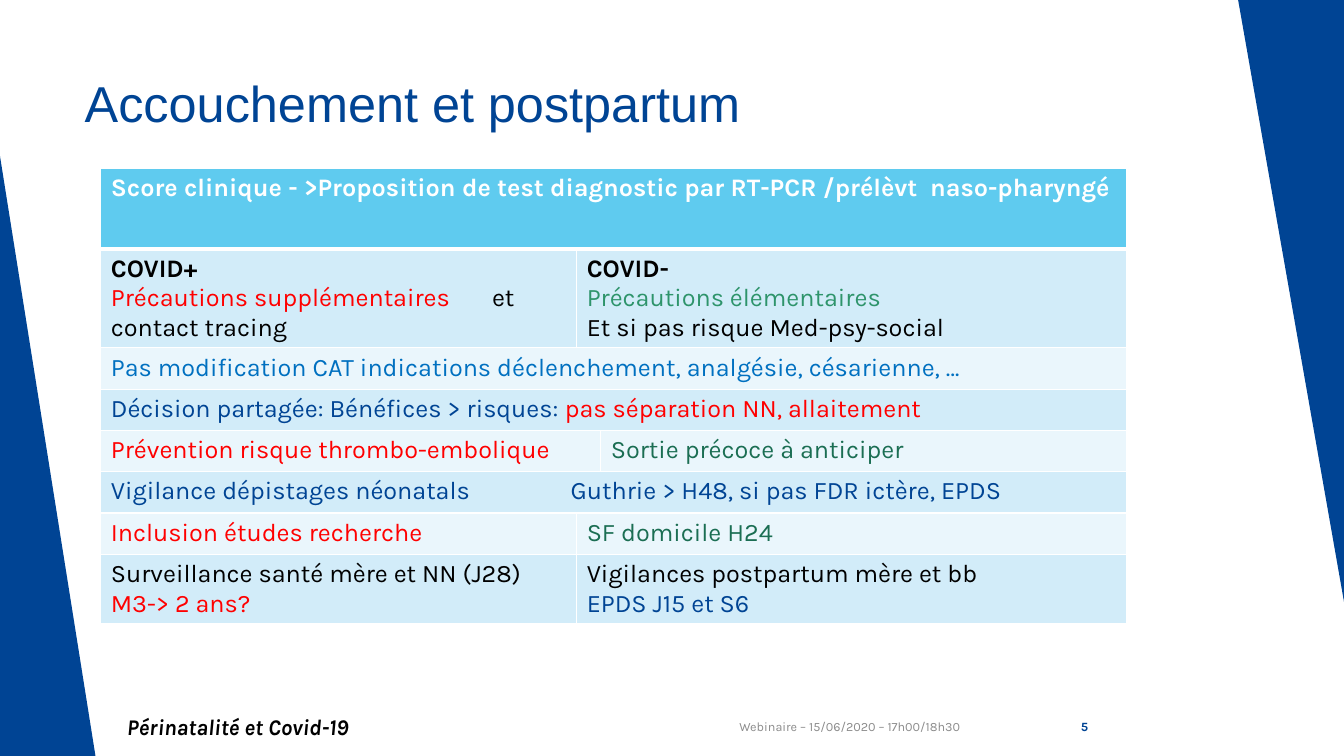
from lxml import etree
from pptx import Presentation
from pptx.dml.color import RGBColor
from pptx.enum.shapes import MSO_SHAPE
from pptx.enum.text import MSO_ANCHOR, PP_ALIGN
from pptx.oxml.ns import qn
from pptx.util import Inches, Pt

TRIANGLE = MSO_SHAPE.RIGHT_TRIANGLE
TOP, MIDDLE = MSO_ANCHOR.TOP, MSO_ANCHOR.MIDDLE
LEFT, RIGHT = PP_ALIGN.LEFT, PP_ALIGN.RIGHT

NAVY = RGBColor(0x00, 0x44, 0x94)
BLUE = RGBColor(0x00, 0x70, 0xC0)
RED = RGBColor(0xFF, 0x00, 0x00)
GREEN = RGBColor(0x2E, 0x94, 0x6B)
DARK_GREEN = RGBColor(0x1B, 0x6E, 0x53)
BLACK = RGBColor(0x00, 0x00, 0x00)
WHITE = RGBColor(0xFF, 0xFF, 0xFF)
GREY = RGBColor(0x8C, 0x8C, 0x8C)
HEADER_FILL = RGBColor(0x5F, 0xCB, 0xEF)
DARK_BAND = RGBColor(0xD2, 0xEC, 0xF9)
LIGHT_BAND = RGBColor(0xEA, 0xF6, 0xFC)


def add_run(paragraph, text, size, color, bold=False, italic=False, font="Karla"):
    run = paragraph.add_run()
    run.text = text
    run.font.name = font
    run.font.size = Pt(size)
    run.font.color.rgb = color
    run.font.bold = bold
    run.font.italic = italic


def add_border(cell, side, points):
    line = etree.SubElement(cell._tc.get_or_add_tcPr(), qn("a:" + side), w=str(Pt(points)))
    fill = etree.SubElement(line, qn("a:solidFill"))
    etree.SubElement(fill, qn("a:srgbClr"), val=str(WHITE))


presentation = Presentation()
presentation.slide_width = Inches(13.33)
presentation.slide_height = Inches(7.5)
slide = presentation.slides.add_slide(presentation.slide_layouts[5])

# Side triangles
for left, top, width, rotation in [(0, 1.55, 0.95, 0), (12.28, 0, 1.05, 180)]:
    triangle = slide.shapes.add_shape(
        TRIANGLE, Inches(left), Inches(top), Inches(width), Inches(5.97))
    triangle.rotation = rotation
    triangle.shadow.inherit = False
    triangle.fill.solid()
    triangle.fill.fore_color.rgb = NAVY
    triangle.line.fill.background()

# Title
title = slide.shapes.title
title.left, title.top = Inches(0.74), Inches(0.67)
title.width, title.height = Inches(9.4), Inches(1.44)
title.text_frame.vertical_anchor = TOP
title.text_frame.paragraphs[0].alignment = LEFT
add_run(title.text_frame.paragraphs[0], "Accouchement et postpartum", 36, NAVY, font="Arial")

# Table content: (row, first column, last column, paragraphs, tab stop in inches)
# Each paragraph is a list of runs: (text, colour, bold)
cells = [
    (0, 0, 2, [[("Score clinique - >Proposition de test diagnostic par RT-PCR "
                 "/prélèvt  naso-pharyngé", WHITE, True)]], None),
    (1, 0, 0, [[("COVID+", BLACK, True)],
               [("Précautions supplémentaires\t", RED, False),
                ("et contact tracing", BLACK, False)]], 3.78),
    (1, 1, 2, [[("COVID-", BLACK, True)],
               [("Précautions élémentaires", GREEN, False)],
               [("Et si pas risque Med-psy-social", BLACK, False)]], None),
    (2, 0, 2, [[("Pas modification CAT indications déclenchement, analgésie, "
                 "césarienne, …", BLUE, False)]], None),
    (3, 0, 2, [[("Décision partagée: Bénéfices > risques: ", NAVY, False),
                ("pas séparation NN, allaitement", RED, False)]], None),
    (4, 0, 1, [[("Prévention risque thrombo-embolique", RED, False)]], None),
    (4, 2, 2, [[("Sortie précoce à anticiper", DARK_GREEN, False)]], None),
    (5, 0, 2, [[("Vigilance dépistages néonatals\tGuthrie > H48, si pas FDR ictère, EPDS",
                 NAVY, False)]], 4.56),
    (6, 0, 0, [[("Inclusion études recherche", RED, False)]], None),
    (6, 1, 2, [[("SF domicile H24", DARK_GREEN, False)]], None),
    (7, 0, 0, [[("Surveillance santé mère et NN (J28) ", BLACK, False),
                ("M3-> 2 ans?", RED, False)]], None),
    (7, 1, 2, [[("Vigilances postpartum mère et bb", BLACK, False)],
               [("EPDS J15 et S6", NAVY, False)]], None),
]
column_widths = [4.72, 0.15, 5.21]
row_heights = [0.8, 0.98] + [0.41] * 5 + [0.68]

table = slide.shapes.add_table(
    len(row_heights), len(column_widths), Inches(1), Inches(1.67),
    Inches(sum(column_widths)), Inches(sum(row_heights))).table
table.first_row = False
table.horz_banding = False
for column, width in zip(table.columns, column_widths):
    column.width = Inches(width)
for row, height in zip(table.rows, row_heights):
    row.height = Inches(height)

# Borders and banded fills
for row_index, row in enumerate(table.rows):
    for cell in row.cells:
        for side in ("lnL", "lnR", "lnT", "lnB"):
            under_header = (row_index, side) in [(0, "lnB"), (1, "lnT")]
            add_border(cell, side, 3 if under_header else 1)
        cell.fill.solid()
        band = DARK_BAND if row_index % 2 else LIGHT_BAND
        cell.fill.fore_color.rgb = band if row_index else HEADER_FILL

# Merged cells and their text
for row_index, first, last, paragraphs, tab_stop in cells:
    cell = table.cell(row_index, first)
    if last > first:
        cell.merge(table.cell(row_index, last))
    for index, runs in enumerate(paragraphs):
        frame = cell.text_frame
        paragraph = frame.add_paragraph() if index else frame.paragraphs[0]
        if tab_stop:
            tabs = etree.SubElement(paragraph._p.get_or_add_pPr(), qn("a:tabLst"))
            etree.SubElement(tabs, qn("a:tab"), pos=str(Inches(tab_stop)), algn="l")
        for text, color, bold in runs:
            add_run(paragraph, text, 18, color, bold)

# Footer: date, event name, slide number
footers = [
    (7.02, 2.6, "Webinaire – 15/06/2020 – 17h00/18h30", 9, GREY, False, False, RIGHT),
    (1.16, 5.35, "Périnatalité et Covid-19", 16, BLACK, True, True, LEFT),
    (10.14, 0.75, "5", 9, NAVY, True, False, RIGHT),
]
for left, width, text, size, color, bold, italic, alignment in footers:
    footer = slide.shapes.add_textbox(Inches(left), Inches(7.01), Inches(width), Inches(0.4))
    footer.text_frame.word_wrap = True
    footer.text_frame.vertical_anchor = MIDDLE
    paragraph = footer.text_frame.paragraphs[0]
    paragraph.alignment = alignment
    add_run(paragraph, text, size, color, bold, italic)

presentation.save("out.pptx")
